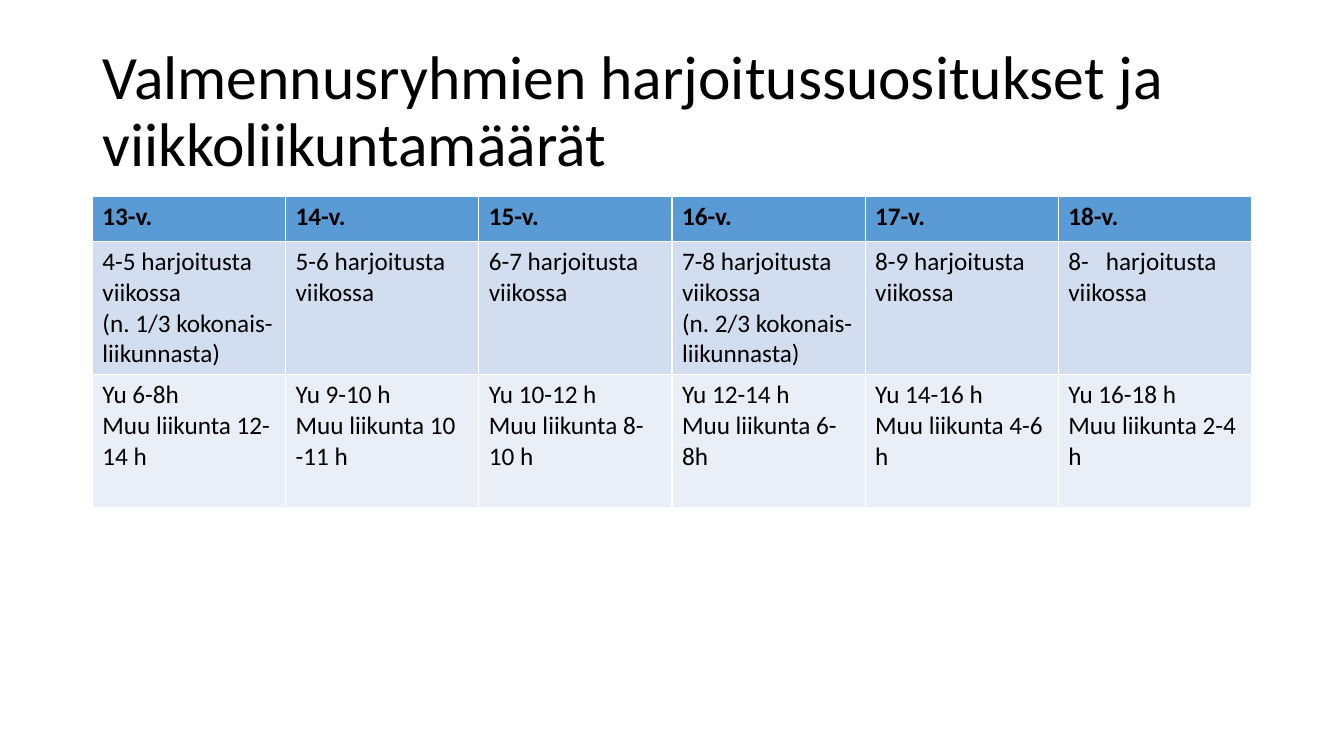
"""Build a slide with training recommendations by age group."""
from pptx import Presentation
from pptx.dml.color import RGBColor
from pptx.enum.text import MSO_ANCHOR, PP_ALIGN
from pptx.util import Pt

PX = 9525
FONT = "Calibri"
LEFT = PP_ALIGN.LEFT
MIDDLE = MSO_ANCHOR.MIDDLE
TITLE_ONLY = 5

BLACK = RGBColor(0x00, 0x00, 0x00)
HEADER_BLUE = RGBColor(0x5B, 0x9B, 0xD5)
MEDIUM_BLUE = RGBColor(0xD2, 0xDE, 0xEF)
PALE_BLUE = RGBColor(0xEA, 0xEF, 0xF7)

TITLE = "Valmennusryhmien harjoitussuositukset ja viikkoliikuntamäärät"
AGES = ["13-v.", "14-v.", "15-v.", "16-v.", "17-v.", "18-v."]
SESSIONS = [
    "4-5 harjoitusta viikossa\n(n. 1/3 kokonais-liikunnasta)",
    "5-6 harjoitusta viikossa",
    "6-7 harjoitusta viikossa",
    "7-8 harjoitusta viikossa\n(n. 2/3 kokonais-liikunnasta)",
    "8-9 harjoitusta viikossa",
    "8-   harjoitusta viikossa",
]
HOURS = [
    "Yu 6-8h\nMuu liikunta 12-14 h",
    "Yu 9-10 h\nMuu liikunta 10 -11 h",
    "Yu 10-12 h\nMuu liikunta 8-10 h",
    "Yu 12-14 h\nMuu liikunta 6-8h",
    "Yu 14-16 h\nMuu liikunta 4-6 h",
    "Yu 16-18 h\nMuu liikunta 2-4 h",
]
ROWS = [
    (AGES, 43, HEADER_BLUE, True),
    (SESSIONS, 127, MEDIUM_BLUE, False),
    (HOURS, 126, PALE_BLUE, False),
]
COLUMN_WIDTH = 184


def write(frame, text, size, bold=False):
    """Write each line of the text as one formatted paragraph."""
    for index, line in enumerate(text.split("\n")):
        para = frame.add_paragraph() if index else frame.paragraphs[0]
        para.alignment = LEFT
        span = para.add_run()
        span.text = line
        span.font.name = FONT
        span.font.size = Pt(size)
        span.font.bold = bold
        span.font.color.rgb = BLACK


def place_title(page):
    """Move and fill the title placeholder."""
    title = page.shapes.title
    title.left, title.top = 88 * PX, 38 * PX
    title.width, title.height = 1104 * PX, 139 * PX
    frame = title.text_frame
    frame.vertical_anchor = MIDDLE
    write(frame, TITLE, 44)
    frame.paragraphs[0].line_spacing = 0.9


def add_training_table(page):
    """Add the table with one column for each age."""
    width = COLUMN_WIDTH * len(AGES)
    height = sum(row[1] for row in ROWS)
    table = page.shapes.add_table(
        len(ROWS), len(AGES), 88 * PX, 187 * PX, width * PX, height * PX
    ).table
    for column in table.columns:
        column.width = COLUMN_WIDTH * PX
    for row, (texts, row_height, color, bold) in zip(table.rows, ROWS):
        row.height = row_height * PX
        for cell, text in zip(row.cells, texts):
            cell.fill.solid()
            cell.fill.fore_color.rgb = color
            write(cell.text_frame, text, 18, bold)


def main():
    """Create and save the deck."""
    deck = Presentation()
    deck.slide_width, deck.slide_height = 1280 * PX, 720 * PX
    page = deck.slides.add_slide(deck.slide_layouts[TITLE_ONLY])
    place_title(page)
    add_training_table(page)
    deck.save("out.pptx")


if __name__ == "__main__":
    main()
